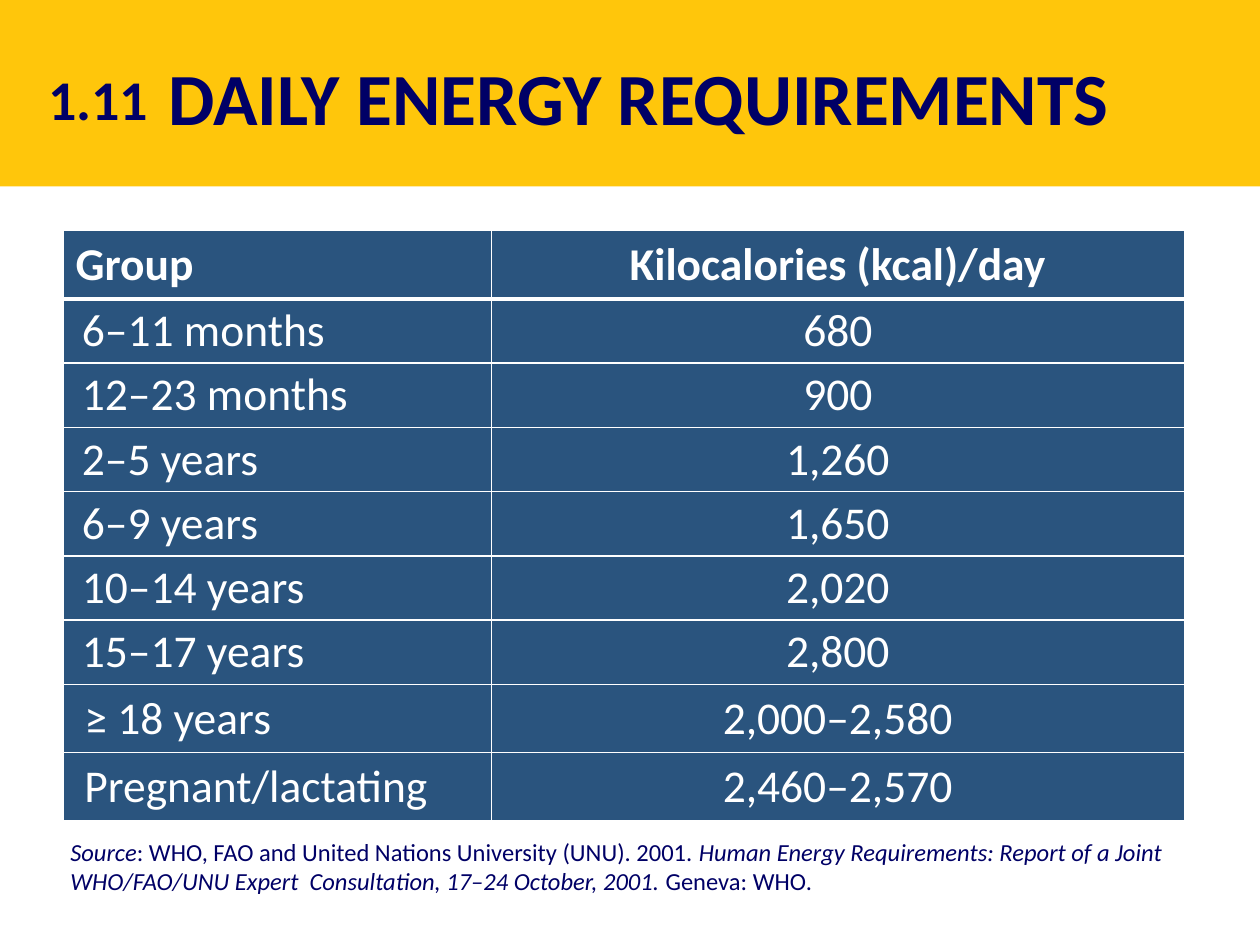
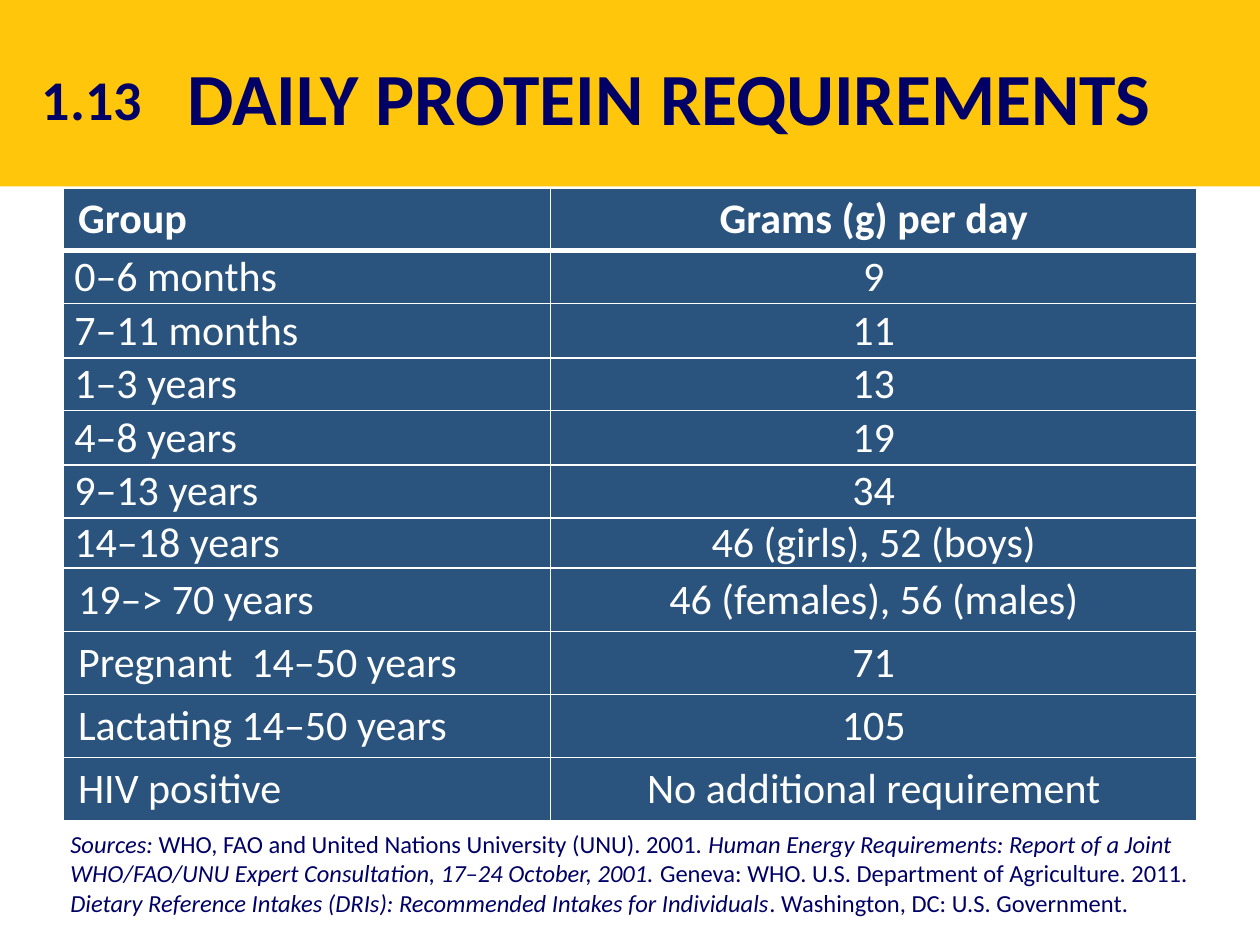
"""Build two slides of daily energy and protein needs."""
from pptx import Presentation, util as u
from pptx.dml.color import RGBColor
from pptx.enum import shapes, text
from pptx.oxml import parse_xml
from pptx.oxml.ns import nsdecls

HUE = {"band": "FFC60B", "navy": "000066", "cell": "2A547E", "white": "FFFFFF"}
FONT = "Calibri"
MID = text.PP_ALIGN.CENTER


def write(frame, *runs, size, hue="navy", bold=False, slant=False, align=None, wrap=True):
    """Fill a frame with runs; with slant, every other run is italic."""
    frame.word_wrap = wrap
    para = frame.paragraphs[0]
    para.alignment = align
    for n, words in enumerate(runs):
        run = para.add_run()
        run.text = words
        font = run.font
        font.name, font.size, font.bold = FONT, u.Pt(size), bold
        font.italic = slant and n % 2 == 0
        font.color.rgb = RGBColor.from_string(HUE[hue])
    return para


def edge(cell, **sides):
    """Draw white borders, given as side=points."""
    for side, width in sides.items():
        cell._tc.get_or_add_tcPr().append(parse_xml(
            f'<a:ln{side} {nsdecls("a")} w="{u.Pt(width)}"><a:solidFill>'
            f'<a:srgbClr val="{HUE["white"]}"/></a:solidFill></a:ln{side}>'))


pages = [
    dict(
        num="1.11", numx=0.28, title="DAILY ENERGY REQUIREMENTS", left=1.24, wide=8.76,
        top=1.83, cols=[3.4, 5.5], rows=[0.54] + [0.51] * 6 + [0.52] * 2,
        size=26, indent=0.07, slim=0.08, full=0.1, both=True,
        data=[
            ("Group", "Kilocalories (kcal)/day"),
            ("6–11 months", "680"),
            ("12–23 months", "900"),
            ("2–5 years", "1,260"),
            ("6–9 years", "1,650"),
            ("10–14 years", "2,020"),
            ("15–17 years", "2,800"),
            ("≥ 18 years", "2,000–2,580"),
            ("Pregnant/lactating", "2,460–2,570"),
        ],
        foot=(0.46, 6.59, 9.1, 0.57),
        source=[
            "Source",
            ": WHO, FAO and United Nations University (UNU). 2001. ",
            "Human Energy Requirements: Report of a Joint WHO/FAO/UNU Expert  Consultation, "
            "17–24 October, 2001. ",
            "Geneva: WHO.",
        ],
    ),
    dict(
        num="1.13", numx=0.23, title="DAILY PROTEIN REQUIREMENTS", left=1.39, wide=8.91,
        top=1.49, cols=[3.87, 5.13],
        rows=[0.5, 0.42, 0.43, 0.42, 0.43, 0.42, 0.4] + [0.5] * 4,
        size=24, indent=0, slim=0.09, full=0.12, both=False,
        data=[
            ("Group", "Grams (g) per day"),
            ("0–6 months", "9"),
            ("7–11 months", "11"),
            ("1–3 years", "13"),
            ("4–8 years", "19"),
            ("9–13 years", "34"),
            ("14–18 years", "46 (girls), 52 (boys)"),
            ("19–> 70 years", "46 (females), 56 (males)"),
            ("Pregnant  14–50 years", "71"),
            ("Lactating 14–50 years", "105"),
            ("HIV positive", "No additional requirement"),
        ],
        foot=(0.46, 6.53, 9.22, 0.81),
        source=[
            "Sources:",
            " WHO, FAO and United Nations University (UNU). 2001. ",
            "Human Energy Requirements: Report of a Joint WHO/FAO/UNU Expert Consultation, "
            "17–24 October, 2001. ",
            "Geneva: WHO. U.S. Department of Agriculture. 2011. ",
            "Dietary Reference Intakes (DRIs): Recommended Intakes for Individuals",
            ". Washington, DC: U.S. Government.",
        ],
    ),
]

deck = Presentation()
deck.slide_width, deck.slide_height = u.Inches(10), u.Inches(7.5)

for page in pages:
    slide = deck.slides.add_slide(deck.slide_layouts[6])
    band = slide.shapes.add_shape(
        shapes.MSO_SHAPE.RECTANGLE, 0, 0, deck.slide_width, u.Inches(1.48))
    band.shadow.inherit = False
    band.fill.solid()
    band.fill.fore_color.rgb = RGBColor.from_string(HUE["band"])
    band.line.fill.background()

    cols, rows = page["cols"], page["rows"]
    grid = slide.shapes.add_table(
        len(rows), len(cols), u.Inches(0.5), u.Inches(page["top"]),
        u.Inches(sum(cols)), u.Inches(sum(rows))).table
    for col, wide in zip(grid.columns, cols):
        col.width = u.Inches(wide)
    for row, tall in zip(grid.rows, rows):
        row.height = u.Inches(tall)

    for r, line in enumerate(page["data"]):
        for c, words in enumerate(line):
            cell = grid.cell(r, c)
            roomy = r == 0 or (r >= 7 and (c == 0 or page["both"]))
            side = page["full"] if roomy else page["slim"]
            cell.margin_left = cell.margin_right = u.Inches(side)
            cell.margin_top = cell.margin_bottom = u.Inches(0.05 if roomy else 0)
            cell.vertical_anchor = text.MSO_ANCHOR.MIDDLE
            edge(cell, L=1, R=1, T=3 if r == 1 else 1, B=3 if r == 0 else 1)
            cell.fill.solid()
            cell.fill.fore_color.rgb = RGBColor.from_string(HUE["cell"])
            para = write(cell.text_frame, words, size=page["size"], hue="white",
                         bold=r == 0, align=MID if c else None)
            if r and c == 0 and page["indent"]:
                para._p.get_or_add_pPr().set("marL", str(u.Inches(page["indent"])))

    texts = [
        (page["foot"], page["source"], dict(size=14, slant=True)),
        ((page["left"], 0.36, page["wide"], 0.6), [page["title"]], dict(size=42, bold=True)),
        ((page["numx"], 0.46, 1, 0.64), [page["num"]],
         dict(size=32, bold=True, align=MID, wrap=False)),
    ]
    for place, runs, look in texts:
        box = slide.shapes.add_textbox(*map(u.Inches, place))
        write(box.text_frame, *runs, **look)

deck.save("out.pptx")
